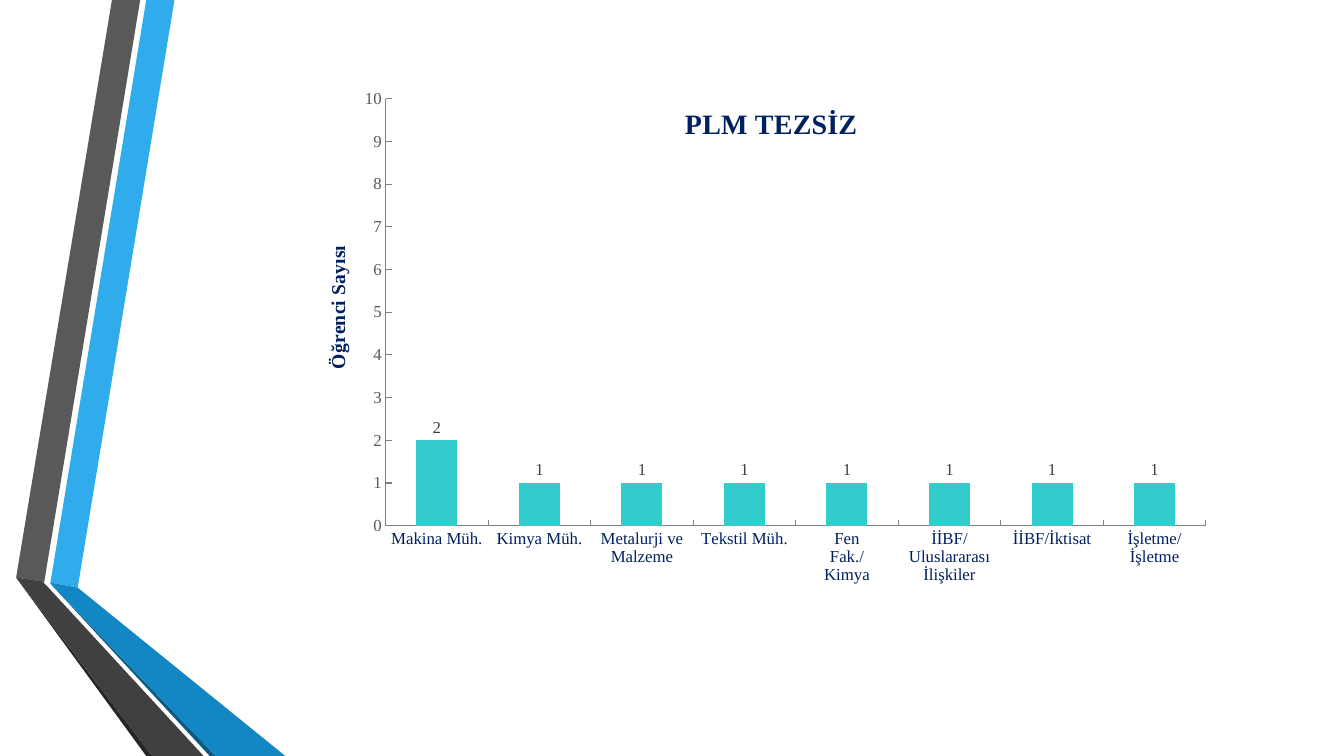
import pptx
import pptx.chart.data
import pptx.dml.color
import pptx.enum.chart
import pptx.oxml
import pptx.oxml.ns
import pptx.util

COLORS = {
    "sky": "30ACEC", "blue": "1287C3", "navy_edge": "0C5A82",
    "gray": "595959", "charcoal": "404040", "black_edge": "262626",
    "title": "002060", "axis": "808080", "bar": "33CCCC",
}

# Ribbon outlines as percentages of the slide's width and height
RIBBONS = [
    ("sky", [(3.75, 77.07), (5.78, 77.73), (12.98, 0), (10.88, 0)]),
    ("gray", [(10.43, 0), (8.33, 0), (1.2, 76.4), (3.3, 76.93)]),
    ("black_edge", [(1.2, 76.4), (10.88, 100), (11.33, 100)]),
    ("navy_edge", [(3.75, 77.2), (15.6, 100), (16.05, 100)]),
    ("blue", [(3.75, 77.2), (16.05, 100), (21.23, 100), (5.78, 77.73), (3.75, 77.07)]),
    ("charcoal", [(15.15, 100), (3.6, 77.73), (3.23, 77.07), (3.3, 76.93),
                  (1.2, 76.4), (11.33, 100)]),
]

STUDENTS = {
    "Makina Müh.": 2, "Kimya Müh.": 1, "Metalurji ve Malzeme": 1, "Tekstil Müh.": 1,
    "Fen Fak./Kimya": 1, "İİBF/Uluslararası İlişkiler": 1, "İİBF/İktisat": 1,
    "İşletme/İşletme": 1,
}


class SlideBuilder:
    FONT = "Times New Roman"

    def __init__(self, prs):
        self.prs = prs
        self.s = prs.slides.add_slide(prs.slide_layouts[6])

    def x(self, share):
        return round(self.prs.slide_width * share / 100)

    def y(self, share):
        return round(self.prs.slide_height * share / 100)

    def color(self, name):
        return pptx.dml.color.RGBColor.from_string(COLORS[name])

    def style(self, font, size, color, bold=False):
        font.name, font.size, font.bold = self.FONT, pptx.util.Pt(size), bold
        font.color.rgb = self.color(color)

    def ribbon(self, color, points):
        pts = [(self.x(px), self.y(py)) for px, py in points]
        builder = self.s.shapes.build_freeform(*pts[0])
        builder.add_line_segments(pts[1:], close=True)
        sp = builder.convert_to_shape()
        sp.shadow.inherit = False
        sp.fill.solid()
        sp.fill.fore_color.rgb = self.color(color)
        sp.line.fill.background()

    def place(self, element, target=None, **shares):
        """Set a manual layout, in shares of the chart's size."""
        qn = pptx.oxml.ns.qn
        old = element.find(qn("c:layout"))
        if old is not None:
            element.remove(old)
        inner = f'<c:layoutTarget val="{target}"/>' if target else ""
        values = "".join(f'<c:{k} val="{v}"/>' for k, v in shares.items())
        layout = pptx.oxml.parse_xml(
            f'<c:layout {pptx.oxml.ns.nsdecls("c")}><c:manualLayout>{inner}'
            f'<c:xMode val="edge"/><c:yMode val="edge"/>{values}'
            '</c:manualLayout></c:layout>')
        element.insert(0 if element.find(qn("c:tx")) is None else 1, layout)

    def title(self, title, text, size, x, y):
        tf = title.text_frame
        tf.text = text
        self.style(tf.paragraphs[0].runs[0].font, size, "title", bold=True)
        self.place(title._element, x=x, y=y)

    def axis(self, axis, color):
        axis.has_major_gridlines = False
        axis.major_tick_mark = pptx.enum.chart.XL_TICK_MARK.INSIDE
        axis.minor_tick_mark = pptx.enum.chart.XL_TICK_MARK.NONE
        axis.format.line.color.rgb = self.color("axis")
        axis.format.line.width = pptx.util.Pt(0.75)
        self.style(axis.tick_labels.font, 12, color)

    def column_chart(self, box, heading, axis_heading, values):
        data = pptx.chart.data.CategoryChartData()
        data.categories = list(values)
        data.add_series("Series 1", list(values.values()))
        left, top, width, height = box
        chart = self.s.shapes.add_chart(
            pptx.enum.chart.XL_CHART_TYPE.COLUMN_CLUSTERED,
            self.x(left), self.y(top), self.x(width), self.y(height), data).chart
        chart.font.name, chart.font.size = "Calibri", pptx.util.Pt(10)
        chart.has_legend = False
        chart.has_title = True
        chart.chart_title.include_in_layout = True
        self.title(chart.chart_title, heading, 20, x=0.405, y=0.043)
        self.place(chart._chartSpace.chart.plotArea, "inner",
                   x=0.085, y=0.04, w=0.892, h=0.706)

        # Axes
        self.axis(chart.category_axis, "title")
        va = chart.value_axis
        self.axis(va, "gray")
        va.minimum_scale, va.maximum_scale, va.major_unit = 0, 10, 1
        va.has_title = True
        self.title(va.axis_title, axis_heading, 14, x=0.015, y=0.277)

        # Columns and their values
        plot = chart.plots[0]
        plot.gap_width = 150
        plot.vary_by_categories = False
        series = plot.series[0]
        series.format.fill.solid()
        series.format.fill.fore_color.rgb = self.color("bar")
        labels = series.data_labels
        labels.show_value = True
        labels.position = pptx.enum.chart.XL_LABEL_POSITION.OUTSIDE_END
        self.style(labels.font, 12, "charcoal")


def main():
    prs = pptx.Presentation()
    prs.slide_width = pptx.util.Inches(13.33)
    prs.slide_height = pptx.util.Inches(7.5)
    slide = SlideBuilder(prs)

    # Folded ribbons on the left
    for color, points in RIBBONS:
        slide.ribbon(color, points)

    # Student numbers by department
    slide.column_chart((22.88, 9.87, 68.42, 80), "PLM TEZSİZ", "Öğrenci Sayısı", STUDENTS)

    prs.save("out.pptx")


if __name__ == "__main__":
    main()
